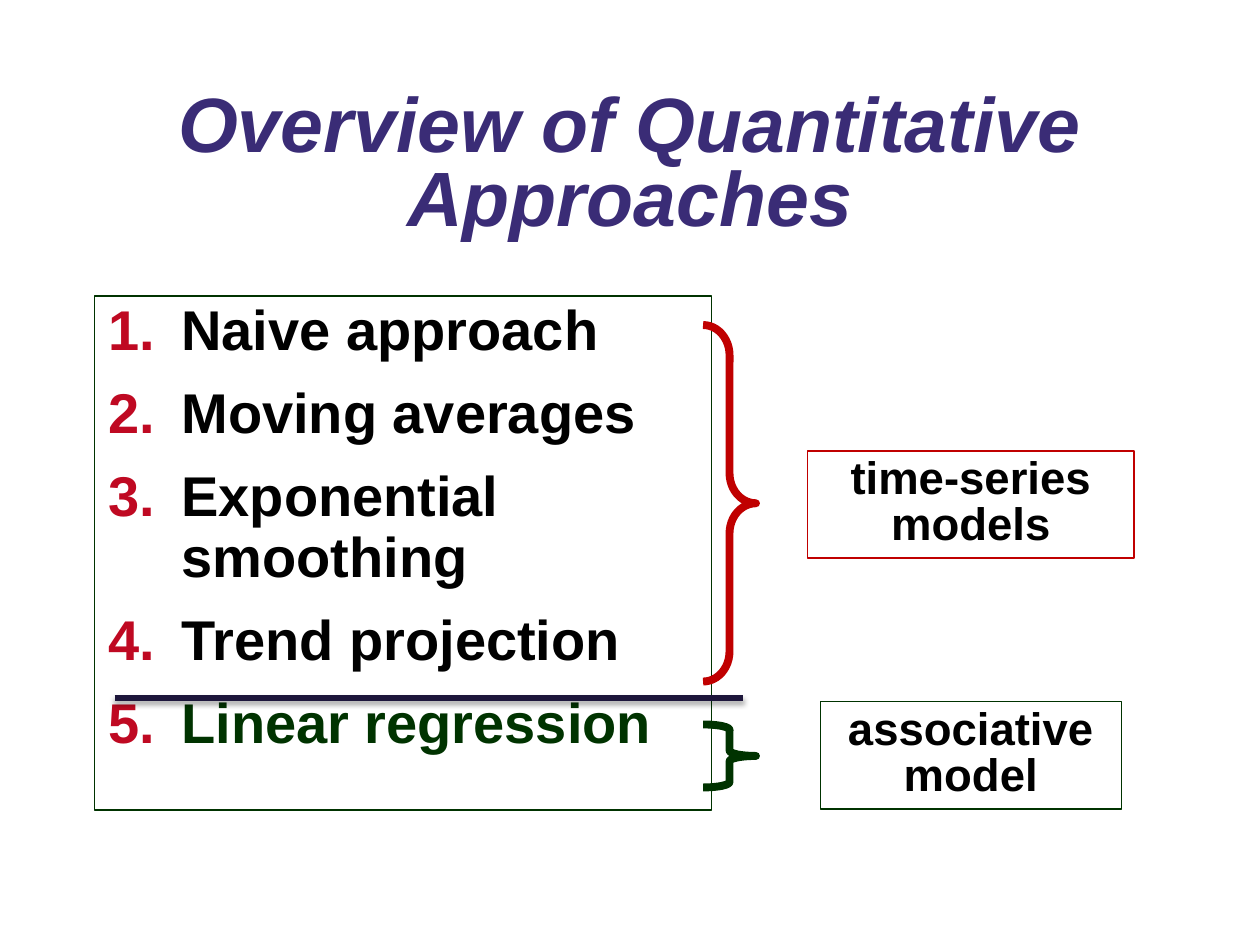
from dataclasses import dataclass

from lxml.etree import SubElement
from pptx import Presentation
from pptx.dml.color import RGBColor
from pptx.enum.shapes import MSO_CONNECTOR, MSO_SHAPE
from pptx.enum.text import MSO_ANCHOR, MSO_AUTO_SIZE, PP_ALIGN
from pptx.oxml.ns import qn
from pptx.util import Inches, Pt

PURPLE = RGBColor(0x3A, 0x2C, 0x76)
NAVY = RGBColor(0x1D, 0x16, 0x3B)
GREEN = RGBColor(0x00, 0x33, 0x00)
RED = RGBColor(0xC0, 0x00, 0x00)
CRIMSON = RGBColor(0xBF, 0x09, 0x22)
BLACK = RGBColor(0x00, 0x00, 0x00)

BRACE_LEFT, BRACE_WIDTH = 5.58, 0.42
LABEL_HEIGHT = 0.85


@dataclass
class ModelGroup:
    label: str
    color: RGBColor
    label_left: float
    label_top: float
    label_width: float
    brace_top: float
    brace_height: float
    brace_curve: float


APPROACHES = [
    ("Naive approach", BLACK),
    ("Moving averages", BLACK),
    ("Exponential smoothing", BLACK),
    ("Trend projection", BLACK),
    ("Linear regression", GREEN),
]
MODEL_GROUPS = [
    ModelGroup("time-series models", RED, 6.41, 3.58, 2.59, 2.58, 2.83, 0.57),
    ModelGroup("associative model", GREEN, 6.51, 5.57, 2.39, 5.75, 0.5, 0.1),
]


def place(shape, left: float, top: float, width: float, height: float) -> None:
    shape.left, shape.top = Inches(left), Inches(top)
    shape.width, shape.height = Inches(width), Inches(height)


def set_frame(frame, anchor=MSO_ANCHOR.TOP, fit=MSO_AUTO_SIZE.NONE) -> None:
    frame.word_wrap = True
    frame.auto_size = fit
    frame.vertical_anchor = anchor
    frame.margin_left = frame.margin_right = Inches(0.11)
    frame.margin_top = frame.margin_bottom = Inches(0.05)


def set_outline(shape, color: RGBColor, width: float) -> None:
    shape.line.color.rgb = color
    shape.line.width = Pt(width)


def write(para, text: str, *, size: float, color: RGBColor, spacing: float,
          align=PP_ALIGN.CENTER, after: float = 0, italic: bool = False) -> None:
    para.alignment = align
    para.line_spacing = spacing
    para.space_before = Pt(0)
    para.space_after = Pt(after)
    span = para.add_run()
    span.text = text
    span.font.name = "Arial"
    span.font.size = Pt(size)
    span.font.bold = True
    span.font.italic = italic
    span.font.color.rgb = color


def number(para, color: RGBColor, indent: float) -> None:
    properties = para._p.get_or_add_pPr()
    properties.set("marL", str(Inches(indent)))
    properties.set("indent", str(-Inches(indent)))
    bullet_color = SubElement(properties, qn("a:buClr"))
    SubElement(bullet_color, qn("a:srgbClr"), val=str(color))
    SubElement(properties, qn("a:buFont"), typeface="Arial")
    SubElement(properties, qn("a:buAutoNum"), type="arabicPeriod")


def draw_title(page, text: str) -> None:
    title = page.shapes.title
    place(title, 0.53, 0.58, 8.94, 1.5)
    set_frame(title.text_frame, anchor=MSO_ANCHOR.MIDDLE)
    write(title.text_frame.paragraphs[0], text, size=44, color=PURPLE,
          spacing=0.8, italic=True)


def draw_approaches(page) -> None:
    body = page.placeholders[1]
    place(body, 0.75, 2.35, 4.9, 4.08)
    set_outline(body, GREEN, 0.75)
    frame = body.text_frame
    set_frame(frame)
    for index, (text, color) in enumerate(APPROACHES):
        para = frame.add_paragraph() if index else frame.paragraphs[0]
        write(para, text, size=32, color=color, spacing=0.9,
              align=PP_ALIGN.LEFT, after=12.8)
        number(para, CRIMSON, 0.58)


def draw_model_group(page, model: ModelGroup) -> None:
    group = page.shapes.add_group_shape()
    box = group.shapes.add_textbox(
        Inches(model.label_left), Inches(model.label_top),
        Inches(model.label_width), Inches(LABEL_HEIGHT))
    set_outline(box, model.color, 0.75)
    set_frame(box.text_frame, fit=MSO_AUTO_SIZE.SHAPE_TO_FIT_TEXT)
    write(box.text_frame.paragraphs[0], model.label, size=26, color=BLACK,
          spacing=0.85)
    brace = group.shapes.add_shape(
        MSO_SHAPE.RIGHT_BRACE, Inches(BRACE_LEFT), Inches(model.brace_top),
        Inches(BRACE_WIDTH), Inches(model.brace_height))
    brace.adjustments[0] = model.brace_curve
    brace.adjustments[1] = 0.5
    brace.shadow.inherit = False
    brace.fill.background()
    set_outline(brace, model.color, 4.5)


def draw_divider(page) -> None:
    divider = page.shapes.add_connector(
        MSO_CONNECTOR.STRAIGHT, Inches(0.91), Inches(5.54), Inches(5.9), Inches(5.54))
    set_outline(divider, NAVY, 3)
    effects = SubElement(divider._element.spPr, qn("a:effectLst"))
    shadow = SubElement(effects, qn("a:outerShdw"), blurRad=str(Pt(3.1)),
                        dist=str(Pt(1.8)), dir="5400000", rotWithShape="0")
    shade = SubElement(shadow, qn("a:srgbClr"), val=str(BLACK))
    SubElement(shade, qn("a:alpha"), val="35000")


def main() -> None:
    deck = Presentation()
    deck.slide_width, deck.slide_height = Inches(10), Inches(7.5)
    page = deck.slides.add_slide(deck.slide_layouts[1])
    draw_title(page, "Overview of Quantitative Approaches")
    draw_approaches(page)
    for model in MODEL_GROUPS:
        draw_model_group(page, model)
    draw_divider(page)
    deck.save("out.pptx")


if __name__ == "__main__":
    main()
